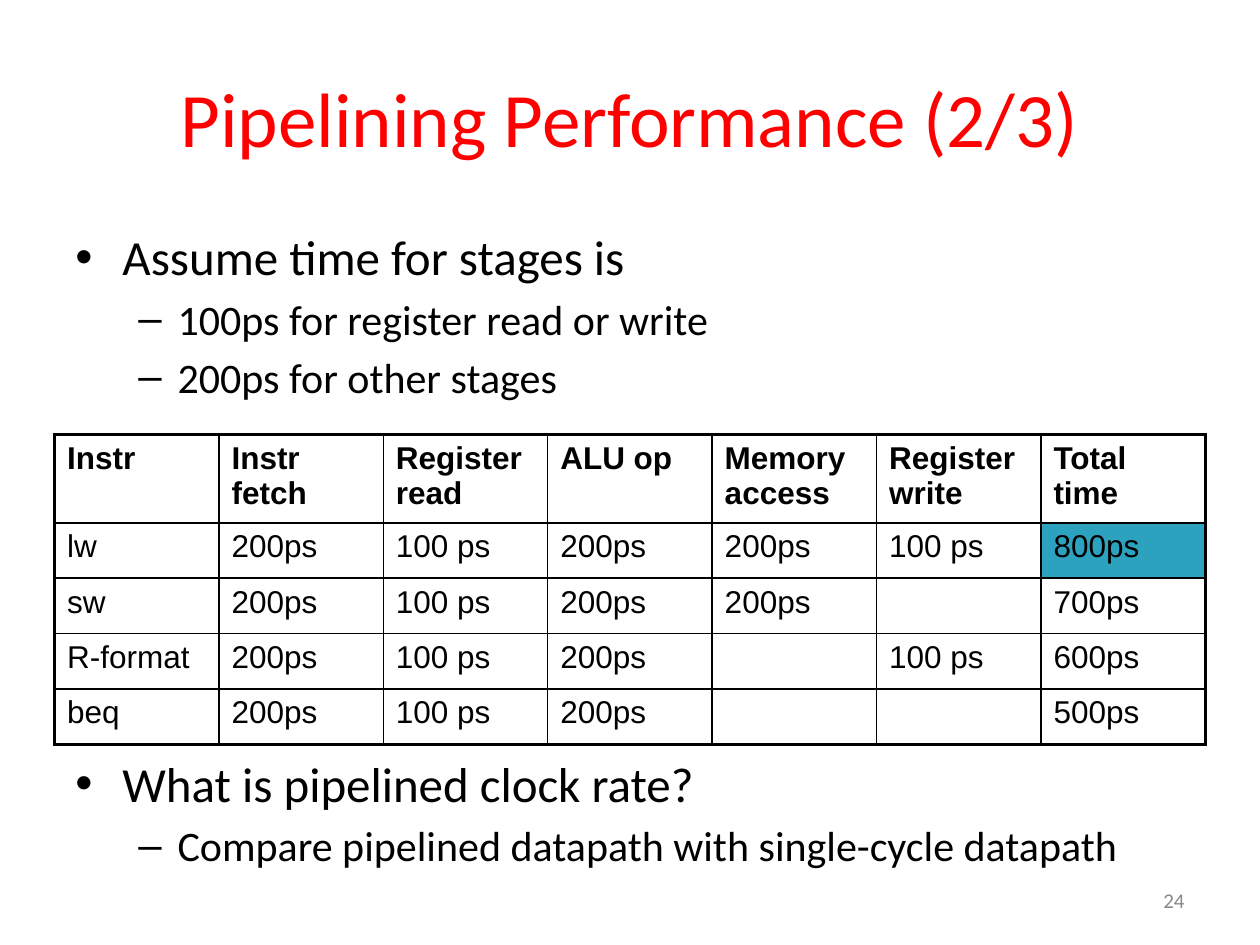
from collections import namedtuple
from dataclasses import dataclass

from lxml import etree
from pptx import Presentation
from pptx.dml.color import RGBColor
from pptx.enum.text import MSO_ANCHOR, PP_ALIGN
from pptx.oxml.ns import qn
from pptx.util import Cm, Pt

LEFT, CENTER, RIGHT = PP_ALIGN.LEFT, PP_ALIGN.CENTER, PP_ALIGN.RIGHT
TOP, MIDDLE = MSO_ANCHOR.TOP, MSO_ANCHOR.MIDDLE
TITLE_ONLY = 5

Box = namedtuple("Box", "left top width height")


@dataclass(frozen=True)
class Theme:
    """Colours, fonts, type sizes and line widths of the deck."""
    ink: str = "000000"
    title: str = "FF0000"
    muted: str = "898989"
    highlight: str = "2DA2BF"
    text_font: str = "Calibri"
    table_font: str = "Arial"
    title_size: int = 44
    bullet_sizes: tuple = (28, 24)
    table_size: int = 18
    number_size: int = 12
    outer_line: float = 2.25
    header_line: float = 1.5
    inner_line: float = 1


THEME = Theme()

BULLETS = [
    (0, "Assume time for stages is", 0),
    (1, "100ps for register read or write", 4.3),
    (1, "200ps for other stages", 4.3),
    (0, "What is pipelined clock rate?", 201),
    (1, "Compare pipelined datapath with single-cycle datapath", 4.3),
]
BULLET_STYLES = [("•", Cm(0.95), Cm(-0.95)), ("–", Cm(2.06), Cm(-0.79))]

STAGE_TIMES = [
    ["Instr", "Instr fetch", "Register read", "ALU op",
     "Memory access", "Register write", "Total time"],
    ["lw", "200ps", "100 ps", "200ps", "200ps", "100 ps", "800ps"],
    ["sw", "200ps", "100 ps", "200ps", "200ps", "", "700ps"],
    ["R-format", "200ps", "100 ps", "200ps", "", "100 ps", "600ps"],
    ["beq", "200ps", "100 ps", "200ps", "", "", "500ps"],
]
HIGHLIGHTED = "800ps"


def write_text(para, text, *, size, font=THEME.text_font, color=THEME.ink,
               bold=False, align=LEFT, before=0):
    """Write one formatted span into a paragraph."""
    para.alignment = align
    para.space_before = Pt(before)
    span = para.add_run()
    span.text = text
    span.font.size = Pt(size)
    span.font.name = font
    span.font.bold = bold
    span.font.color.rgb = RGBColor.from_string(color)


def place(shape, box, anchor):
    """Fit a text shape to its box and return its text frame."""
    shape.left, shape.top, shape.width, shape.height = box
    frame = shape.text_frame
    frame.word_wrap = True
    frame.vertical_anchor = anchor
    return frame


def set_bullet(para, level):
    """Give a paragraph the bullet and hanging indent of its level."""
    symbol, margin, indent = BULLET_STYLES[level]
    para.level = level
    properties = para._p.get_or_add_pPr()
    properties.set("marL", str(margin))
    properties.set("indent", str(indent))
    etree.SubElement(properties, qn("a:buFont"), typeface="Arial")
    etree.SubElement(properties, qn("a:buChar"), char=symbol)


def set_borders(cell, widths):
    """Draw the left, right, top and bottom borders of a cell."""
    properties = cell._tc.get_or_add_tcPr()
    for position, (side, width) in enumerate(zip("LRTB", widths)):
        line = etree.Element(qn(f"a:ln{side}"), w=str(Pt(width)))
        fill = etree.SubElement(line, qn("a:solidFill"))
        etree.SubElement(fill, qn("a:srgbClr"), val=THEME.ink)
        properties.insert(position, line)


def add_title(page, box, text):
    """Place and format the title placeholder."""
    frame = place(page.shapes.title, box, MIDDLE)
    write_text(frame.paragraphs[0], text, size=THEME.title_size,
               color=THEME.title, align=CENTER)


def add_bullets(page, box, bullets):
    """Add the bulleted text that runs above and below the table."""
    frame = place(page.shapes.add_textbox(*box), box, TOP)
    for index, (level, text, before) in enumerate(bullets):
        para = frame.add_paragraph() if index else frame.paragraphs[0]
        write_text(para, text, size=THEME.bullet_sizes[level], before=before)
        set_bullet(para, level)


def add_stage_table(page, box, rows, header_height):
    """Add the table of stage times with equal columns and body rows."""
    last_row, last_column = len(rows) - 1, len(rows[0]) - 1
    table = page.shapes.add_table(len(rows), len(rows[0]), *box).table
    table.first_row = table.horz_banding = False
    for column in table.columns:
        column.width = box.width // len(rows[0])
    for index, row in enumerate(table.rows):
        row.height = (box.height - header_height) // last_row if index else header_height
    row_lines = [THEME.outer_line, THEME.header_line,
                 *[THEME.inner_line] * (last_row - 1), THEME.outer_line]
    column_lines = [THEME.outer_line, *[THEME.inner_line] * last_column, THEME.outer_line]
    for r, values in enumerate(rows):
        for c, value in enumerate(values):
            cell = table.cell(r, c)
            if value == HIGHLIGHTED:
                cell.fill.solid()
                cell.fill.fore_color.rgb = RGBColor.from_string(THEME.highlight)
            else:
                cell.fill.background()
            set_borders(cell, column_lines[c:c + 2] + row_lines[r:r + 2])
            if value:
                write_text(cell.text_frame.paragraphs[0], value, size=THEME.table_size,
                           font=THEME.table_font, bold=r == 0)


def add_page_number(page, box, number):
    """Add the page number at the lower right."""
    frame = place(page.shapes.add_textbox(*box), box, MIDDLE)
    write_text(frame.paragraphs[0], number, size=THEME.number_size,
               color=THEME.muted, align=RIGHT)


def main():
    """Build the slide and save the deck."""
    deck = Presentation()
    deck.slide_width, deck.slide_height = Cm(25.4), Cm(19.05)
    page = deck.slides.add_slide(deck.slide_layouts[TITLE_ONLY])
    add_title(page, Box(Cm(1.27), Cm(0.76), Cm(22.86), Cm(3.18)),
              "Pipelining Performance (2/3)")
    add_bullets(page, Box(Cm(1.27), Cm(4.45), Cm(22.86), Cm(13.72)), BULLETS)
    add_stage_table(page, Box(Cm(1.1), Cm(8.76), Cm(23.2), Cm(6.15)),
                    STAGE_TIMES, Cm(1.68))
    add_page_number(page, Box(Cm(18.2), Cm(17.65), Cm(5.93), Cm(1.01)), "24")
    deck.save("out.pptx")


if __name__ == "__main__":
    main()
